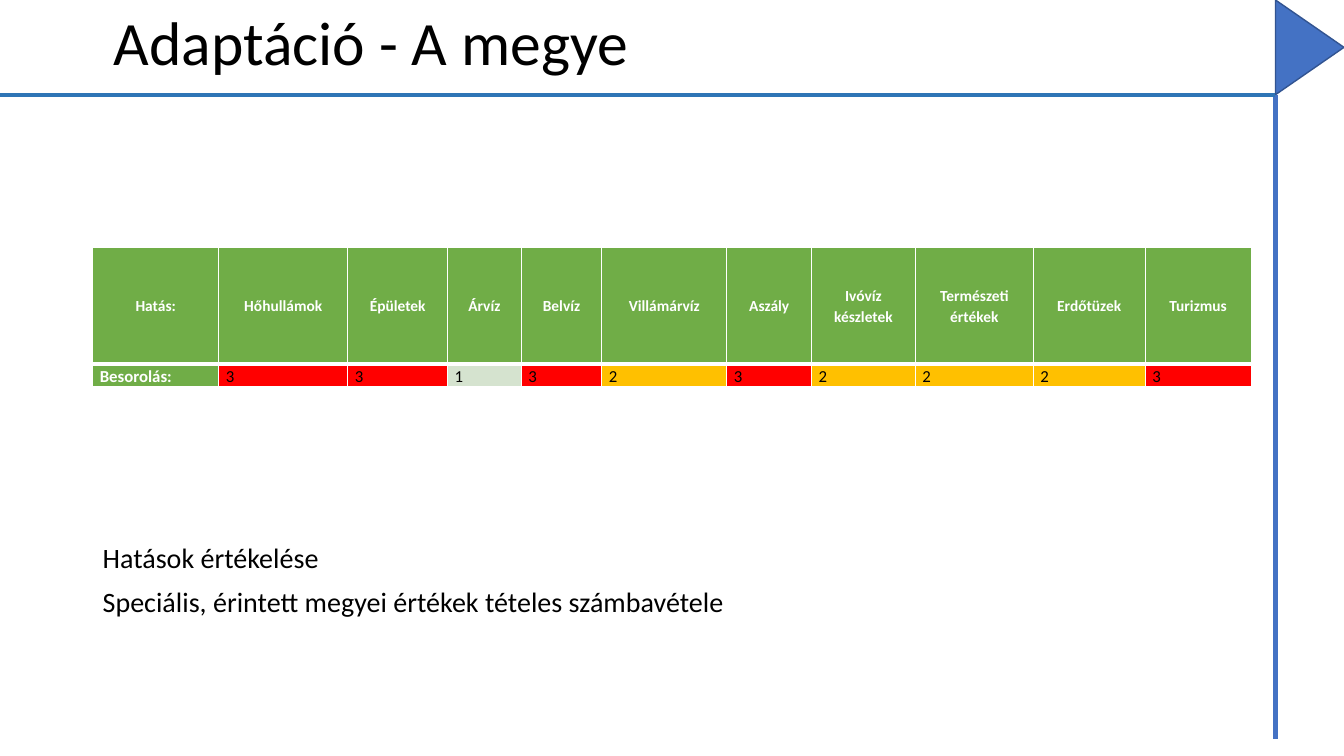
"""Build the county adaptation slide with its impact rating table."""
from lxml import etree
from pptx import Presentation
from pptx import util as u
from pptx.dml.color import RGBColor
from pptx.enum import shapes, text
from pptx.oxml import ns

TITLE = "Adaptáció - A megye"
NOTES = ["Hatások értékelése", "Speciális, érintett megyei értékek tételes számbavétele"]
HEADS = ("Hatás:", "Besorolás:")
IMPACTS = [
    ("Hőhullámok", 3, 1.28),
    ("Épületek", 3, 0.99),
    ("Árvíz", 1, 0.73),
    ("Belvíz", 3, 0.8),
    ("Villámárvíz", 2, 1.24),
    ("Aszály", 3, 0.84),
    ("Ivóvíz készletek", 2, 1.03),
    ("Természeti értékek", 2, 1.17),
    ("Erdőtüzek", 2, 1.11),
    ("Turizmus", 3, 1.05),
]
HEAD_WIDTH = 1.25
ROW_HEIGHTS = (1.16, 0.22)
RATING_FILLS = {1: "D5E3CF", 2: "FFC000", 3: "FF0000"}
GREEN, BLUE, WHITE, BLACK = "70AD47", "4472C4", "FFFFFF", "000000"
LEFT, WIDTH = 0.92, 11.5
RULE_X, RULE_Y, RULE_END = 12.65, 0.94, 7.33


def color(value):
    return RGBColor.from_string(value)


def add_span(para, words, size, ink, bold=False):
    span = para.add_run()
    span.text = words
    span.font.name = "Calibri"
    span.font.size = u.Pt(size)
    span.font.bold = bold
    span.font.color.rgb = color(ink)


def add_text(page, place, lines, size, anchor):
    box = page.shapes.add_textbox(*map(u.Inches, place))
    frame = box.text_frame
    frame.word_wrap = True
    frame.vertical_anchor = anchor
    for index, line in enumerate(lines):
        para = frame.add_paragraph() if index else frame.paragraphs[0]
        para.line_spacing = 0.9
        para.space_before = u.Pt(10 if index else 0)
        add_span(para, line, size, BLACK)


def add_rule(page, start, end, ink):
    rule = page.shapes.add_connector(
        shapes.MSO_CONNECTOR.STRAIGHT, *map(u.Inches, start + end))
    rule.line.color.rgb = color(ink)
    rule.line.width = u.Pt(3)
    etree.SubElement(rule._element.spPr, ns.qn("a:effectLst"))


def add_borders(cell, widths):
    properties = cell._tc.get_or_add_tcPr()
    for side, width in zip("LRTB", widths):
        line = etree.SubElement(properties, ns.qn(f"a:ln{side}"), w=str(u.Pt(width)))
        fill = etree.SubElement(line, ns.qn("a:solidFill"))
        etree.SubElement(fill, ns.qn("a:srgbClr"), val=WHITE)


def fill_cell(cell, words, fill, ink, bold, header):
    add_borders(cell, (1, 1, 1, 3) if header else (1, 1, 3, 1))
    cell.fill.solid()
    cell.fill.fore_color.rgb = color(fill)
    cell.margin_left = cell.margin_right = u.Inches(0.07)
    cell.margin_top = cell.margin_bottom = 0
    cell.vertical_anchor = text.MSO_ANCHOR.MIDDLE if header else text.MSO_ANCHOR.TOP
    para = cell.text_frame.paragraphs[0]
    para.alignment = text.PP_ALIGN.CENTER if header else text.PP_ALIGN.JUSTIFY
    para.line_spacing = 1.12
    add_span(para, words, 11 if header else 12, ink, bold)


def add_ratings(page):
    table = page.shapes.add_table(
        2, len(IMPACTS) + 1, u.Inches(LEFT), u.Inches(2.45),
        u.Inches(WIDTH), u.Inches(sum(ROW_HEIGHTS))).table
    for row, height in zip(table.rows, ROW_HEIGHTS):
        row.height = u.Inches(height)
    table.columns[0].width = u.Inches(HEAD_WIDTH)
    for row, head in enumerate(HEADS):
        fill_cell(table.cell(row, 0), head, GREEN, WHITE, True, row == 0)
    for column, (impact, rating, width) in enumerate(IMPACTS, 1):
        table.columns[column].width = u.Inches(width)
        fill_cell(table.cell(0, column), impact, GREEN, WHITE, True, True)
        fill_cell(table.cell(1, column), str(rating), RATING_FILLS[rating], BLACK, False, False)


def add_pointer(page):
    pointer = page.shapes.add_shape(
        shapes.MSO_SHAPE.ISOSCELES_TRIANGLE, *map(u.Inches, (12.52, 0.13, 0.94, 0.68)))
    pointer.rotation = 90
    pointer.shadow.inherit = False
    pointer.fill.solid()
    pointer.fill.fore_color.rgb = color(BLUE)
    pointer.line.color.rgb = color("325491")
    pointer.line.width = u.Pt(1)


def main():
    deck = Presentation()
    deck.slide_width, deck.slide_height = u.Inches(13.33), u.Inches(7.5)
    page = deck.slides.add_slide(deck.slide_layouts[6])
    add_text(page, (1.03, 0, 6.14, 0.91), [TITLE], 44, text.MSO_ANCHOR.MIDDLE)
    add_text(page, (LEFT, 5.35, WIDTH, 1.21), NOTES, 20, text.MSO_ANCHOR.TOP)
    add_pointer(page)
    add_rule(page, (RULE_X, RULE_Y), (RULE_X, RULE_END), BLUE)
    add_rule(page, (0, RULE_Y), (RULE_X, RULE_Y), "2E75B6")
    add_ratings(page)
    deck.save("out.pptx")


if __name__ == "__main__":
    main()
